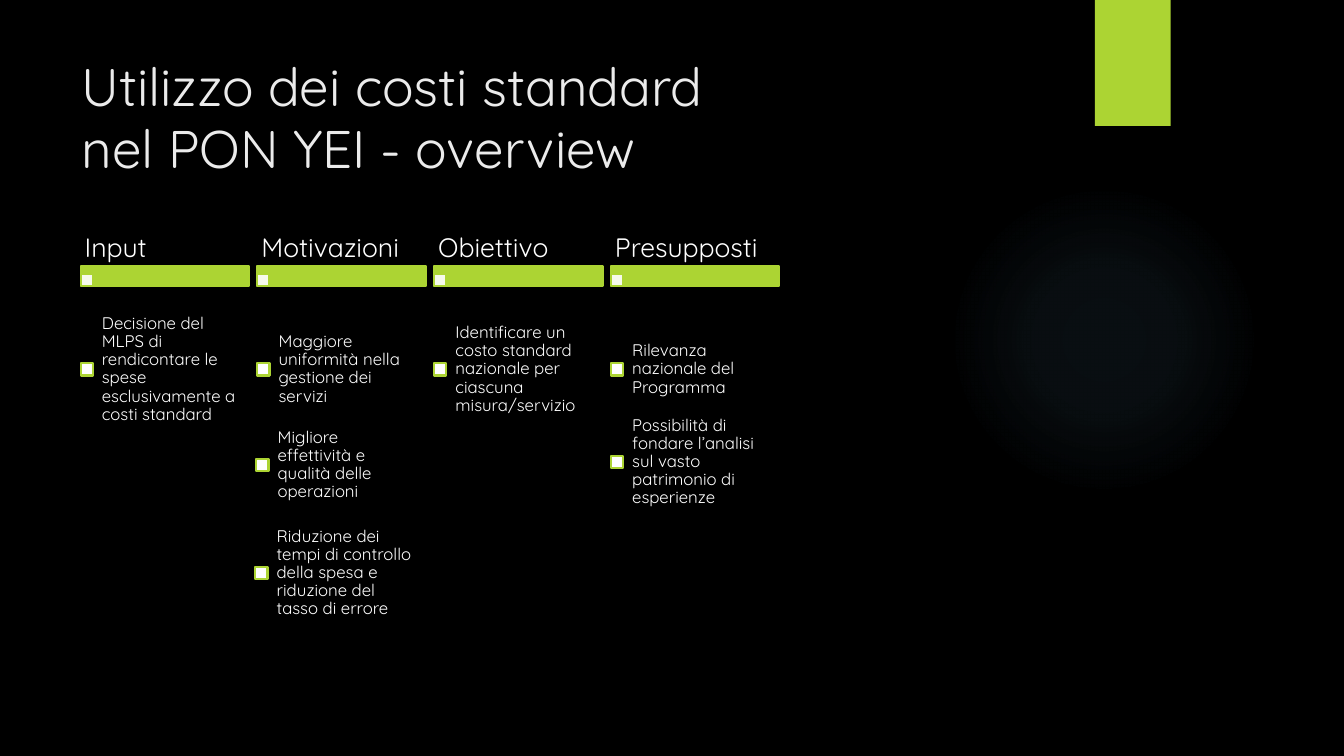
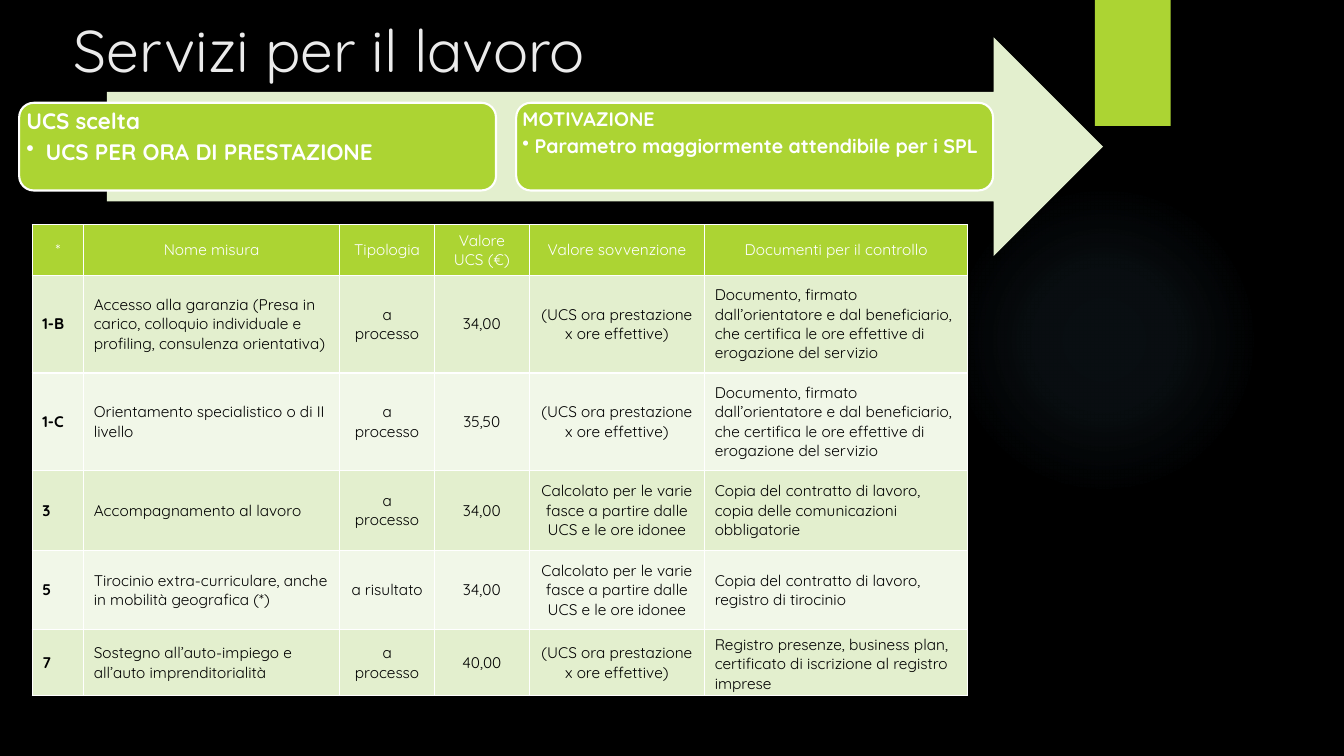
from dataclasses import dataclass

from lxml.etree import SubElement
from pptx import Presentation
from pptx.dml.color import RGBColor
from pptx.enum.shapes import MSO_SHAPE
from pptx.enum.text import MSO_ANCHOR, PP_ALIGN
from pptx.oxml import parse_xml
from pptx.oxml.ns import nsdecls, qn
from pptx.util import Inches, Pt


@dataclass(frozen=True)
class Theme:
    font: str = "Quicksand"
    background: str = "000000"
    accent: str = "ACD433"
    band_dark: str = "E3EFCE"
    band_light: str = "F1F7E8"
    glow: str = "7AC4F0"
    white: str = "FFFFFF"
    black: str = "000000"
    title: str = "EBEBEB"
    heading_size: float = 19
    item_size: float = 12
    table_size: float = 11
    outline: float = 1.5


THEME = Theme()

OVERVIEW_COLUMNS = [
    ("Input", [
        (0, 0.63, "Decisione del MLPS di rendicontare le spese esclusivamente a costi standard"),
    ]),
    ("Motivazioni", [
        (0, 0.63, "Maggiore uniformità nella gestione dei servizi"),
        (-0.01, 1.58, "Migliore effettività e qualità delle operazioni"),
        (-0.02, 2.65, "Riduzione dei tempi di controllo della spesa e riduzione del tasso di errore"),
    ]),
    ("Obiettivo", [
        (0, 0.63, "Identificare un costo standard nazionale per ciascuna misura/servizio"),
    ]),
    ("Presupposti", [
        (0, 0.63, "Rilevanza nazionale del Programma"),
        (0, 1.55, "Possibilità di fondare l’analisi sul vasto patrimonio di esperienze"),
    ]),
]

ACTUAL_HOURS = "(UCS ora prestazione x ore effettive)"
BY_BAND = "Calcolato per le varie fasce a partire dalle UCS e le ore idonee"
SIGNED_DOCUMENT = (
    "Documento, firmato dall’orientatore e dal beneficiario, "
    "che certifica le ore effettive di erogazione del servizio"
)
SERVICE_ROWS = [
    ("*", "Nome misura", "Tipologia", "Valore UCS (€)", "Valore sovvenzione",
     "Documenti per il controllo"),
    ("1-B", "Accesso alla garanzia (Presa in carico, colloquio individuale e profiling, "
     "consulenza orientativa)", "a processo", "34,00", ACTUAL_HOURS, SIGNED_DOCUMENT),
    ("1-C", "Orientamento specialistico o di II livello", "a processo", "35,50",
     ACTUAL_HOURS, SIGNED_DOCUMENT),
    ("3", "Accompagnamento al lavoro", "a processo", "34,00", BY_BAND,
     "Copia del contratto di lavoro, copia delle comunicazioni obbligatorie"),
    ("5", "Tirocinio extra-curriculare, anche in mobilità geografica (*)", "a risultato",
     "34,00", BY_BAND, "Copia del contratto di lavoro, registro di tirocinio"),
    ("7", "Sostegno all’auto-impiego e all’auto imprenditorialità", "a processo", "40,00",
     ACTUAL_HOURS,
     "Registro presenze, business plan, certificato di iscrizione al registro imprese"),
]
COLUMN_WIDTHS = [0.51, 2.54, 0.94, 0.94, 1.74, 2.61]
ROW_HEIGHTS = [0.5, 0.97, 0.97, 0.79, 0.79, 0.62]
CENTERED_COLUMNS = (2, 3, 4)


def rgb(color):
    return RGBColor.from_string(color)


def write_paragraph(paragraph, text, *, size, color=THEME.white, bold=False,
                    align=PP_ALIGN.LEFT, line_spacing=None, space_after=None):
    paragraph.text = text
    paragraph.alignment = align
    if line_spacing is not None:
        paragraph.line_spacing = line_spacing
    if space_after is not None:
        paragraph.space_after = Pt(space_after)
    for run in paragraph.runs:
        run.font.name = THEME.font
        run.font.size = Pt(size)
        run.font.bold = bold
        run.font.color.rgb = rgb(color)


def set_frame(text_frame, anchor, horizontal, vertical):
    text_frame.word_wrap = True
    text_frame.vertical_anchor = anchor
    text_frame.margin_left = text_frame.margin_right = Inches(horizontal)
    text_frame.margin_top = text_frame.margin_bottom = Inches(vertical)


def add_text(slide, box, text, *, anchor=MSO_ANCHOR.MIDDLE, insets=(0.1, 0.05), **text_format):
    text_box = slide.shapes.add_textbox(*map(Inches, box))
    set_frame(text_box.text_frame, anchor, *insets)
    write_paragraph(text_box.text_frame.paragraphs[0], text, **text_format)


def add_box(slide, box, fill, *, kind=MSO_SHAPE.RECTANGLE, line=None, opacity=None):
    shape = slide.shapes.add_shape(kind, *map(Inches, box))
    shape.shadow.inherit = False
    shape.fill.solid()
    shape.fill.fore_color.rgb = rgb(fill)
    if opacity is not None:
        color = shape.element.spPr.find(qn("a:solidFill"))[0]
        SubElement(color, qn("a:alpha"), val=str(opacity * 1000))
    if line:
        shape.line.color.rgb = rgb(line)
        shape.line.width = Pt(THEME.outline)
    else:
        shape.line.fill.background()
    return shape


def add_glow(slide, box):
    shape = add_box(slide, box, THEME.glow, kind=MSO_SHAPE.OVAL)
    stops = "".join(
        f'<a:gs pos="{position * 1000}"><a:srgbClr val="{THEME.glow}">'
        f'<a:alpha val="{alpha * 1000}"/></a:srgbClr></a:gs>'
        for position, alpha in ((0, 7), (36, 6), (69, 0), (100, 0))
    )
    gradient = parse_xml(
        f'<a:gradFill {nsdecls("a")} rotWithShape="1"><a:gsLst>{stops}</a:gsLst>'
        '<a:path path="circle"><a:fillToRect l="50000" t="50000" r="50000" b="50000"/>'
        '</a:path></a:gradFill>'
    )
    properties = shape.element.spPr
    properties.replace(properties.find(qn("a:solidFill")), gradient)


def add_base_slide(presentation, title, title_box, title_size):
    slide = presentation.slides.add_slide(presentation.slide_layouts[6])
    slide.background.fill.solid()
    slide.background.fill.fore_color.rgb = rgb(THEME.background)
    add_glow(slide, (9.41, 1.83, 3.08, 3.08))
    add_box(slide, (10.86, 0, 0.75, 1.25), THEME.accent)
    add_text(slide, title_box, title, anchor=MSO_ANCHOR.TOP, size=title_size,
             color=THEME.title, line_spacing=0.97)
    return slide


def add_overview_column(slide, left, top, width, heading, items):
    marker = 0.12
    item_height = 1.49
    add_box(slide, (left, top + 0.35, width, 0.2), THEME.accent, line=THEME.accent)
    add_box(slide, (left, top + 0.43, marker, marker), THEME.white,
            line=THEME.accent, opacity=90)
    add_text(slide, (left, top, width, 0.35), heading, insets=(0.04, 0.03),
             size=THEME.heading_size, line_spacing=0.9)
    for shift, offset, text in items:
        item_left = left + shift
        item_top = top + offset
        marker_top = item_top + (item_height - marker) / 2
        add_box(slide, (item_left, marker_top, marker, marker), THEME.white, line=THEME.accent)
        add_text(slide, (item_left + marker, item_top, width - marker, item_height), text,
                 insets=(0.09, 0.09), size=THEME.item_size, line_spacing=0.9)


def add_bullet(paragraph, indent):
    properties = paragraph._p.get_or_add_pPr()
    properties.set("marL", str(Inches(indent)))
    properties.set("indent", str(-Inches(indent)))
    SubElement(properties, qn("a:buChar"), char="•")


def add_choice_card(slide, box, heading, point, *, size, indent, insets):
    card = add_box(slide, box, THEME.accent, kind=MSO_SHAPE.ROUNDED_RECTANGLE, line=THEME.white)
    text_frame = card.text_frame
    set_frame(text_frame, MSO_ANCHOR.TOP, *insets)
    text_format = {"size": size, "bold": True, "line_spacing": 0.9}
    write_paragraph(text_frame.paragraphs[0], heading, space_after=size * 0.3, **text_format)
    bullet = text_frame.add_paragraph()
    add_bullet(bullet, indent)
    write_paragraph(bullet, point, **text_format)


def add_choice_arrow(slide, left, top, width, height):
    add_box(slide, (left + 0.87, top, width - 0.87, height), THEME.band_dark,
            kind=MSO_SHAPE.RIGHT_ARROW)
    card_top, card_width, card_height = top + 0.65, 4.73, 0.87
    add_choice_card(slide, (left, card_top, card_width, card_height), "UCS scelta",
                    "UCS PER ORA DI PRESTAZIONE", size=16, indent=0.19, insets=(0.03, 0.03))
    add_choice_card(slide, (left + card_width + 0.2, card_top, card_width, card_height),
                    "MOTIVAZIONE", "Parametro maggiormente attendibile per i SPL",
                    size=14, indent=0.12, insets=(0.02, 0.02))


def set_cell_borders(cell):
    properties = cell._tc.get_or_add_tcPr()
    for index, side in enumerate(("lnL", "lnR", "lnT", "lnB")):
        border = parse_xml(
            f'<a:{side} {nsdecls("a")} w="{Pt(1)}"><a:solidFill>'
            f'<a:srgbClr val="{THEME.white}"/></a:solidFill></a:{side}>'
        )
        properties.insert(index, border)


def add_services_table(slide, left, top):
    box = (left, top, sum(COLUMN_WIDTHS), sum(ROW_HEIGHTS))
    table = slide.shapes.add_table(len(SERVICE_ROWS), len(COLUMN_WIDTHS),
                                   *map(Inches, box)).table
    for column, width in zip(table.columns, COLUMN_WIDTHS):
        column.width = Inches(width)
    for row, height in zip(table.rows, ROW_HEIGHTS):
        row.height = Inches(height)
    for row_index, values in enumerate(SERVICE_ROWS):
        is_header = row_index == 0
        band = THEME.band_dark if row_index % 2 else THEME.band_light
        for column_index, value in enumerate(values):
            cell = table.cell(row_index, column_index)
            cell.vertical_anchor = MSO_ANCHOR.MIDDLE
            cell.fill.solid()
            cell.fill.fore_color.rgb = rgb(THEME.accent if is_header else band)
            set_cell_borders(cell)
            centered = is_header or column_index in CENTERED_COLUMNS
            write_paragraph(
                cell.text_frame.paragraphs[0], value, size=THEME.table_size,
                color=THEME.white if is_header else THEME.black,
                bold=column_index == 0 and not is_header,
                align=PP_ALIGN.CENTER if centered else PP_ALIGN.LEFT,
            )


def build_overview(presentation):
    slide = add_base_slide(presentation,
                           "Utilizzo dei costi standard\vnel PON YEI - overview",
                           (0.71, 0.52, 10.29, 1.53), 37.8)
    left, width, span = 0.8, 1.67, 6.93
    pitch = (span - width) / (len(OVERVIEW_COLUMNS) - 1)
    for index, (heading, items) in enumerate(OVERVIEW_COLUMNS):
        add_overview_column(slide, left + index * pitch, 2.29, width, heading, items)


def build_services(presentation):
    slide = add_base_slide(presentation, "Servizi per il lavoro", (0.63, 0.13, 10.29, 1.53), 42)
    add_choice_arrow(slide, 0.19, 0.37, 10.75, 2.17)
    add_services_table(slide, 0.32, 2.23)


def main():
    presentation = Presentation()
    presentation.slide_width = Inches(13.33)
    presentation.slide_height = Inches(7.5)
    build_overview(presentation)
    build_services(presentation)
    presentation.save("out.pptx")


if __name__ == "__main__":
    main()
